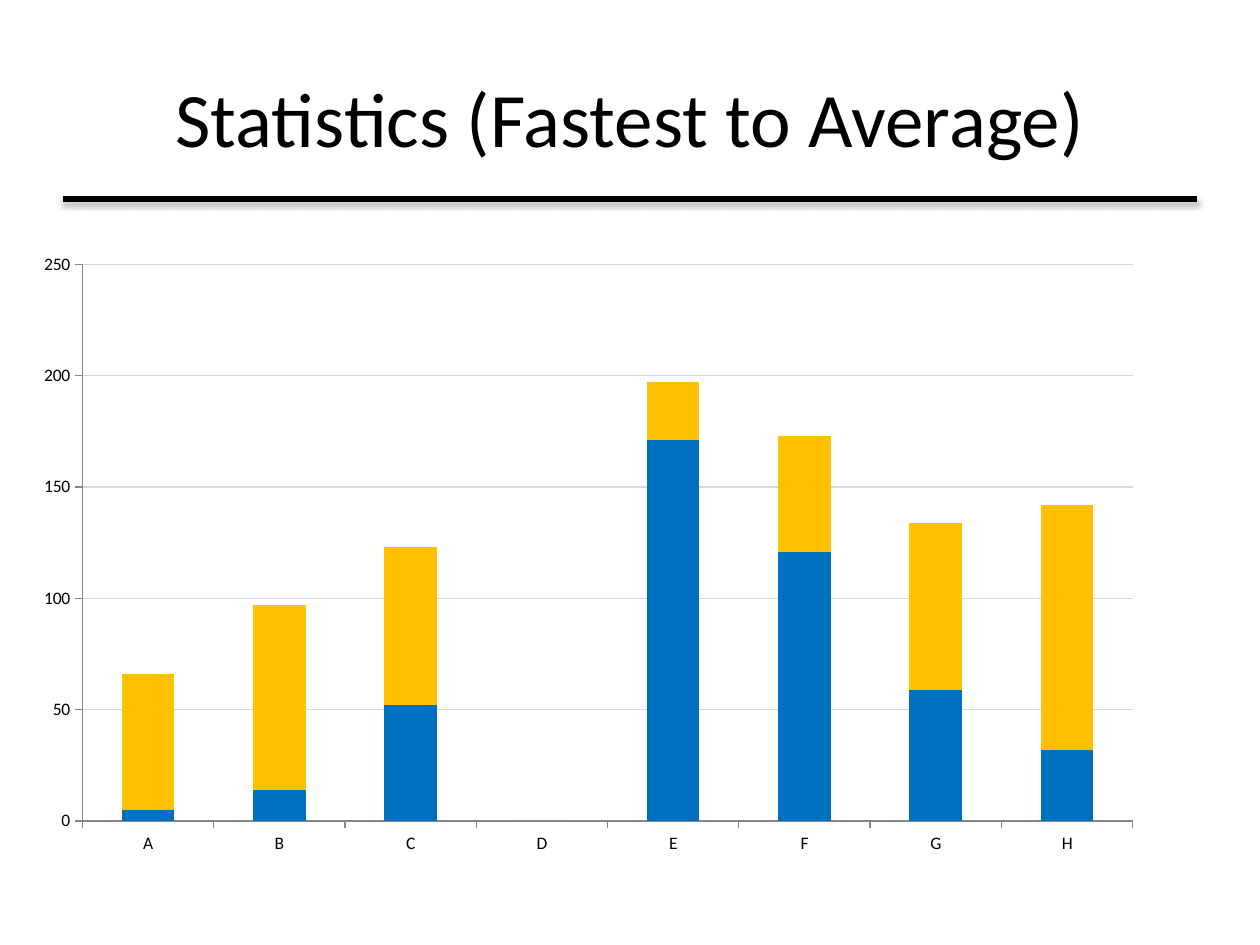
import pptx
import pptx.chart.data
import pptx.dml.color
import pptx.enum.chart
import pptx.enum.shapes
import pptx.enum.text
import pptx.oxml
import pptx.oxml.ns
import pptx.util
from pptx.util import Inches

SHADOW = (
    '<a:effectLst %s><a:outerShdw blurRad="40000" dist="23000" dir="5400000" '
    'rotWithShape="0"><a:srgbClr val="000000"><a:alpha val="35000"/></a:srgbClr>'
    "</a:outerShdw></a:effectLst>" % pptx.oxml.ns.nsdecls("a")
)


def rgb(value):
    return pptx.dml.color.RGBColor.from_string(value)


def apply(obj, formats):
    for name, value in formats.items():
        setattr(obj, name, value)


class SlideBuilder:
    font_name = "Calibri"
    ink = "000000"

    def __init__(self, prs):
        self.slide = prs.slides.add_slide(prs.slide_layouts[6])

    def style_font(self, font, size):
        apply(font, {"name": self.font_name, "size": pptx.util.Pt(size), "bold": False})
        font.color.rgb = rgb(self.ink)

    def style_line(self, line, color, width):
        line.color.rgb = rgb(color)
        line.width = pptx.util.Pt(width)

    def title(self, text, box, size):
        tf = self.slide.shapes.add_textbox(*map(Inches, box)).text_frame
        apply(tf, {"word_wrap": True, "vertical_anchor": pptx.enum.text.MSO_ANCHOR.MIDDLE})
        p = tf.paragraphs[0]
        p.alignment = pptx.enum.text.PP_ALIGN.CENTER
        r = p.add_run()
        r.text = text
        self.style_font(r.font, size)

    def rule(self, left, right, top, width):
        sp = self.slide.shapes.add_connector(
            pptx.enum.shapes.MSO_CONNECTOR.STRAIGHT,
            *map(Inches, (left, top, right, top)),
        )
        self.style_line(sp.line, self.ink, width)
        sp._element.spPr.append(pptx.oxml.parse_xml(SHADOW))

    def stacked_columns(self, categories, series, box, size):
        data = pptx.chart.data.CategoryChartData()
        data.categories = categories
        for name, values, _ in series:
            data.add_series(name, values)
        chart = self.slide.shapes.add_chart(
            pptx.enum.chart.XL_CHART_TYPE.COLUMN_STACKED, *map(Inches, box), data
        ).chart
        apply(chart, {"has_legend": False, "has_title": False})
        self.style_font(chart.font, size)
        plot = chart.plots[0]
        apply(plot, {"gap_width": 150, "overlap": 100, "vary_by_categories": False})
        for ser, (_, _, color) in zip(plot.series, series):
            ser.format.fill.solid()
            ser.format.fill.fore_color.rgb = rgb(color)
        for axis in (chart.category_axis, chart.value_axis):
            axis.major_tick_mark = pptx.enum.chart.XL_TICK_MARK.OUTSIDE
            self.style_line(axis.format.line, "868686", 0.75)
        apply(chart.value_axis, {
            "minimum_scale": 0,
            "maximum_scale": 250,
            "major_unit": 50,
            "has_major_gridlines": True,
        })
        self.style_line(chart.value_axis.major_gridlines.format.line, "D9D9D9", 0.75)


def main():
    prs = pptx.Presentation()
    apply(prs, {"slide_width": Inches(10), "slide_height": Inches(7.5)})
    s = SlideBuilder(prs)
    s.rule(0.5, 9.5, 1.58, 3)
    s.title("Statistics (Fastest to Average)", (0.5, 0.3, 9, 1.25), 44)
    s.stacked_columns(
        list("ABCDEFGH"),
        [
            ("Series 1", (5, 14, 52, 0, 171, 121, 59, 32), "0070C0"),
            ("Series 2", (61, 83, 71, 0, 26, 52, 75, 110), "FFC000"),
        ],
        (0.17, 1.92, 9, 4.95),
        10,
    )
    prs.save("out.pptx")


if __name__ == "__main__":
    main()
